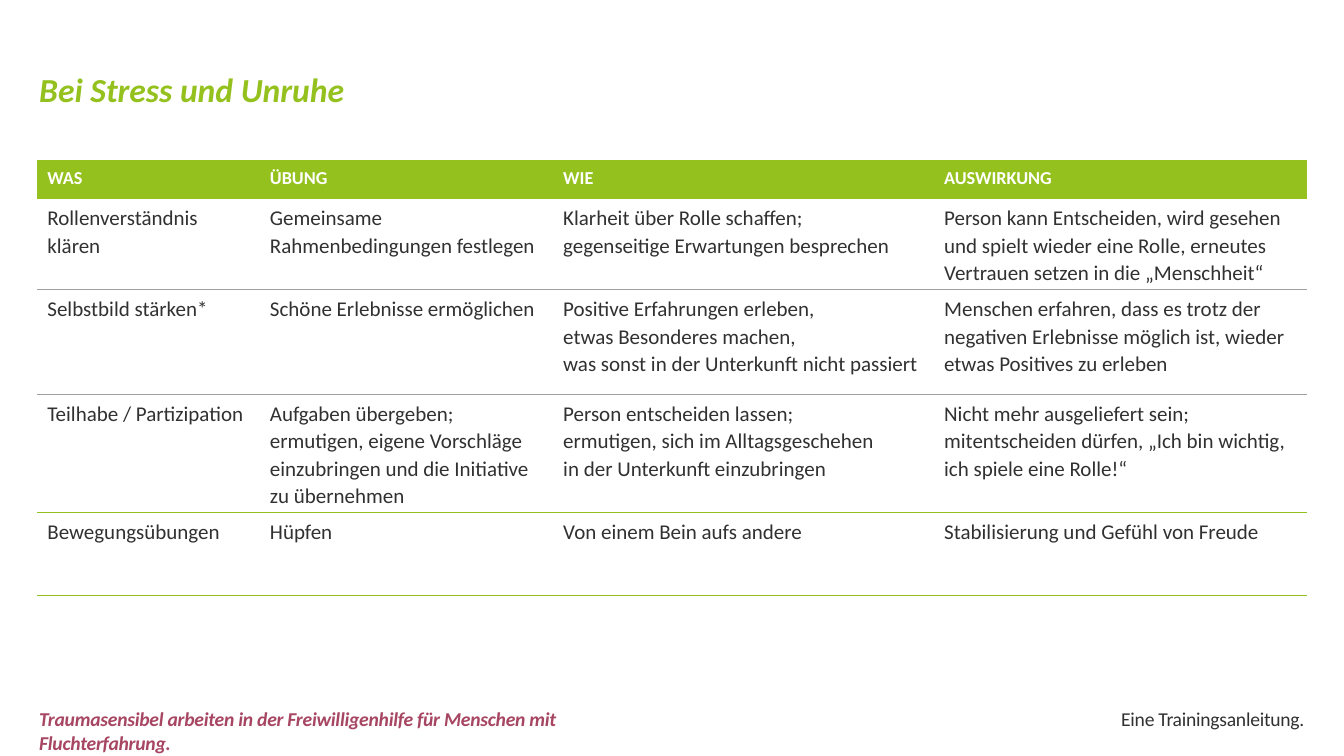
from lxml import etree
from pptx import Presentation
from pptx import util as u
from pptx.dml.color import RGBColor
from pptx.enum import text
from pptx.oxml.ns import qn

COLORS = {
    "green": "95C11F",
    "berry": "A74662",
    "ink": "313131",
    "white": "FFFFFF",
    "gray": "A0A0A0",
}
FONT = "Calibri"
PLAIN_STYLE = "{2D5ABB26-0587-4C30-8999-92F81FD0307C}"

COLUMN_WIDTHS = [5.61, 7.39, 9.6, 9.4]
ROW_HEIGHTS = [0.97, 2.29, 2.64, 2.87, 2.1]
# Colour and width in points of the line below each row
ROW_LINES = [None, ("gray", 0.5), ("gray", 0.5), ("green", 0.5), ("green", 1)]
EXERCISES = [
    ["WAS", "ÜBUNG", "WIE", "AUSWIRKUNG"],
    [
        "Rollenverständnis klären",
        "Gemeinsame Rahmenbedingungen festlegen",
        "Klarheit über Rolle schaffen;\ngegenseitige Erwartungen besprechen",
        "Person kann Entscheiden, wird gesehen und spielt wieder eine Rolle, "
        "erneutes Vertrauen setzen in die „Menschheit“",
    ],
    [
        "Selbstbild stärken*",
        "Schöne Erlebnisse ermöglichen",
        "Positive Erfahrungen erleben,\netwas Besonderes machen,\n"
        "was sonst in der Unterkunft nicht passiert",
        "Menschen erfahren, dass es trotz der negativen Erlebnisse möglich ist, "
        "wieder\netwas Positives zu erleben",
    ],
    [
        "Teilhabe / Partizipation",
        "Aufgaben übergeben; ermutigen, eigene Vorschläge einzubringen "
        "und die Initiative zu übernehmen",
        "Person entscheiden lassen;\nermutigen, sich im Alltagsgeschehen\n"
        "in der Unterkunft einzubringen",
        "Nicht mehr ausgeliefert sein; mitentscheiden dürfen, "
        "„Ich bin wichtig, ich spiele eine Rolle!“",
    ],
    [
        "Bewegungsübungen",
        "Hüpfen",
        "Von einem Bein aufs andere",
        "Stabilisierung und Gefühl von Freude",
    ],
]


def add_run(paragraph, words, size, color, bold=False, italic=False):
    run = paragraph.add_run()
    run.text = words
    font = run.font
    font.name, font.size = FONT, u.Pt(size)
    font.bold, font.italic = bold, italic
    font.color.rgb = RGBColor.from_string(COLORS[color])
    return run


def add_title(slide, words):
    box = slide.shapes.add_textbox(u.Cm(0.74), u.Cm(1.6), u.Cm(32.33), u.Cm(1.19))
    box.text_frame.word_wrap = True
    box.text_frame.vertical_anchor = text.MSO_ANCHOR.MIDDLE
    paragraph = box.text_frame.paragraphs[0]
    paragraph.line_spacing = u.Pt(32)
    add_run(paragraph, words, 24, "green", bold=True, italic=True)


def add_footer(slide, words, left, width, color, alignment, emphasis=False):
    box = slide.shapes.add_textbox(u.Cm(left), u.Cm(17.7), u.Cm(width), u.Cm(0.86))
    box.text_frame.word_wrap = False
    box.text_frame.auto_size = text.MSO_AUTO_SIZE.SHAPE_TO_FIT_TEXT
    paragraph = box.text_frame.paragraphs[0]
    paragraph.alignment = alignment
    run = add_run(paragraph, words, 14, color, bold=emphasis, italic=emphasis)
    run.font._element.set("spc", "-20")


def add_bottom_line(cell, color, width):
    properties = cell._tc.get_or_add_tcPr()
    line = etree.SubElement(properties, qn("a:lnB"), w=str(u.Pt(width)))
    fill = etree.SubElement(line, qn("a:solidFill"))
    etree.SubElement(fill, qn("a:srgbClr"), val=COLORS[color])


def fill_cell(cell, words, is_header, line):
    if line:
        add_bottom_line(cell, *line)
    if is_header:
        cell.fill.solid()
        cell.fill.fore_color.rgb = RGBColor.from_string(COLORS["green"])
    else:
        cell.fill.background()
    size, color = (13, "white") if is_header else (15, "ink")
    paragraph = cell.text_frame.paragraphs[0]
    paragraph.line_spacing = 1.07
    for index, part in enumerate(words.split("\n")):
        if index:
            paragraph.add_line_break()
        add_run(paragraph, part, size, color, bold=is_header)


def add_exercise_table(slide):
    frame = slide.shapes.add_table(
        len(ROW_HEIGHTS), len(COLUMN_WIDTHS), u.Cm(0.94), u.Cm(4.04),
        u.Cm(sum(COLUMN_WIDTHS)), u.Cm(sum(ROW_HEIGHTS)))
    table = frame.table
    table.horz_banding = False
    table._tbl.tblPr.find(qn("a:tableStyleId")).text = PLAIN_STYLE
    for column, width in zip(table.columns, COLUMN_WIDTHS):
        column.width = u.Cm(width)
    for index, (row, height) in enumerate(zip(table.rows, ROW_HEIGHTS)):
        row.height = u.Cm(height)
        for cell, words in zip(row.cells, EXERCISES[index]):
            fill_cell(cell, words, index == 0, ROW_LINES[index])


def main():
    presentation = Presentation()
    presentation.slide_width = u.Cm(33.87)
    presentation.slide_height = u.Cm(19.05)
    slide = presentation.slides.add_slide(presentation.slide_layouts[6])
    add_footer(
        slide,
        "Traumasensibel arbeiten in der Freiwilligenhilfe für Menschen mit Fluchterfahrung.",
        0.74, 16.94, "berry", text.PP_ALIGN.LEFT, emphasis=True)
    add_footer(slide, "Eine Trainingsanleitung.", 27.91, 5.21, "ink", text.PP_ALIGN.RIGHT)
    add_title(slide, "Bei Stress und Unruhe")
    add_exercise_table(slide)
    presentation.save("out.pptx")


if __name__ == "__main__":
    main()
